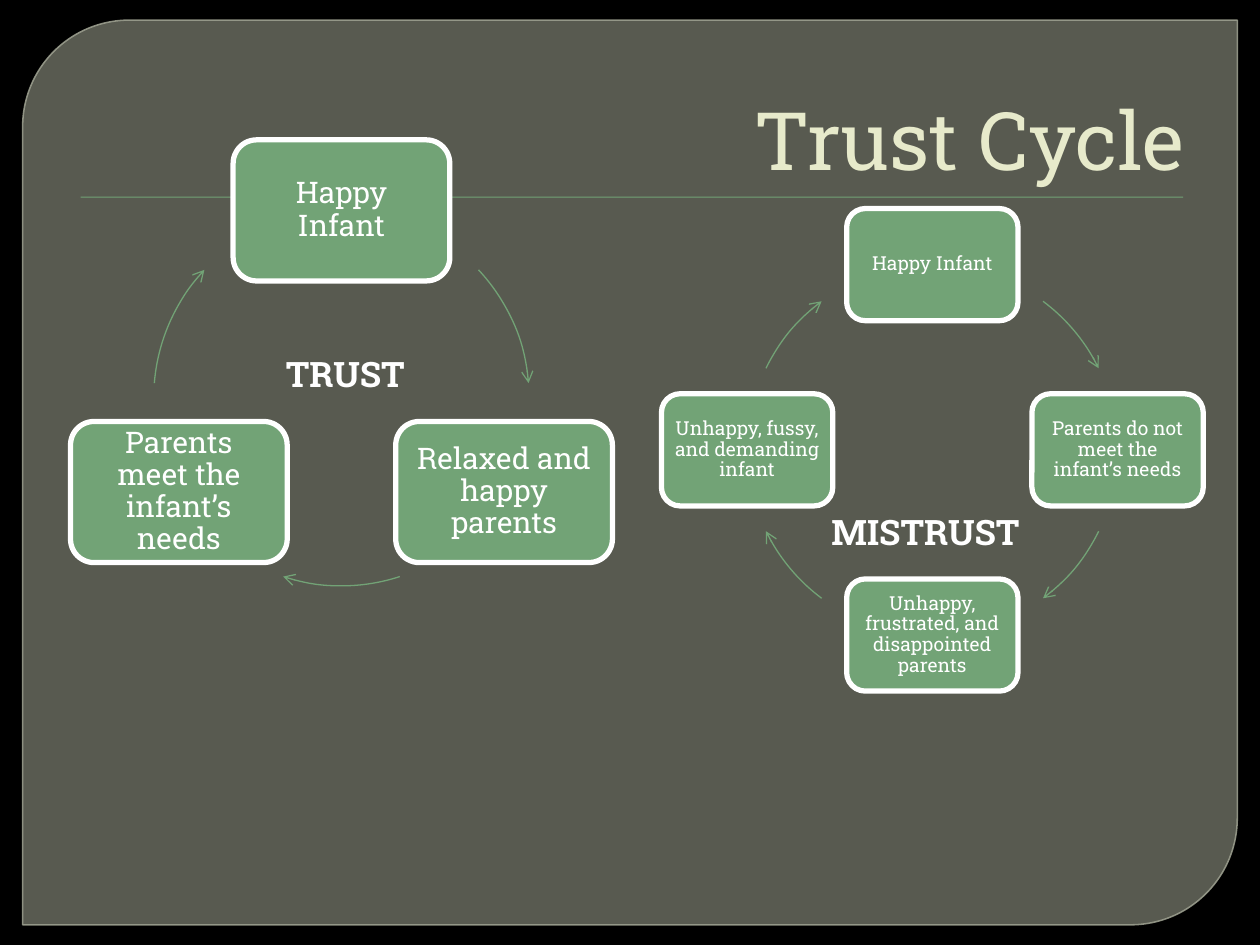
from math import cos, radians, sin

from lxml import etree
from pptx import Presentation
from pptx.dml.color import RGBColor
from pptx.enum.shapes import MSO_SHAPE
from pptx.enum.text import MSO_ANCHOR, MSO_AUTO_SIZE, PP_ALIGN
from pptx.oxml.ns import qn
from pptx.util import Inches, Pt

PANEL = MSO_SHAPE.ROUND_2_DIAG_RECTANGLE
RECTANGLE = MSO_SHAPE.RECTANGLE
ROUNDED = MSO_SHAPE.ROUNDED_RECTANGLE
ARC = MSO_SHAPE.ARC
MIDDLE, BOTTOM = MSO_ANCHOR.MIDDLE, MSO_ANCHOR.BOTTOM
CENTER, RIGHT = PP_ALIGN.CENTER, PP_ALIGN.RIGHT
NO_FIT, FIT_SHAPE = MSO_AUTO_SIZE.NONE, MSO_AUTO_SIZE.SHAPE_TO_FIT_TEXT

BLACK = RGBColor(0x00, 0x00, 0x00)
WHITE = RGBColor(0xFF, 0xFF, 0xFF)
GREEN = RGBColor(0x72, 0xA3, 0x76)
CREAM = RGBColor(0xE7, 0xEA, 0xCB)
OLIVE = RGBColor(0x88, 0x8B, 0x7B)
OLIVE_EDGE = RGBColor(0x9D, 0xA0, 0x90)
FONT = "Roboto Slab"

TRUST_STEPS = ["Happy Infant", "Relaxed and happy parents",
               "Parents meet the infant’s needs"]
TRUST_ARCS = [(316.9, 355.4), (71.9, 108.1), (184.6, 223.1)]
MISTRUST_STEPS = ["Happy Infant", "Parents do not meet the infant’s needs",
                  "Unhappy, frustrated, and disappointed parents",
                  "Unhappy, fussy, and demanding infant"]
MISTRUST_ARCS = [(306.7, 333.9), (26.1, 53.3), (126.7, 153.9), (206.1, 233.3)]


def set_opacity(shape, fill_percent, line_percent):
    colors = list(shape._element.spPr.iter(qn("a:srgbClr")))
    for color, percent in zip(colors, (fill_percent, line_percent)):
        etree.SubElement(color, qn("a:alpha")).set("val", str(percent * 1000))


def style_text(paragraph, size, color, bold=False):
    font = paragraph.font
    font.name, font.size, font.bold = FONT, Pt(size), bold
    font.color.rgb = color


def add_block(shapes, kind, left, top, width, height, fill=None):
    block = shapes.add_shape(kind, Inches(left), Inches(top),
                             Inches(width), Inches(height))
    block.shadow.inherit = False
    if fill is None:
        block.fill.background()
    else:
        block.fill.solid()
        block.fill.fore_color.rgb = fill
    block.line.fill.background()
    return block


def set_line(shape, color, width):
    shape.line.color.rgb = color
    shape.line.width = Pt(width)


def add_backdrop(slide):
    slide.background.fill.solid()
    slide.background.fill.fore_color.rgb = BLACK
    panel = add_block(slide.shapes, PANEL, 0.18, 0.16, 9.64, 7.18, OLIVE)
    panel.adjustments[0] = 0.118
    set_line(panel, OLIVE_EDGE, 0.87)
    set_opacity(panel, 65, 88)
    add_block(slide.shapes, RECTANGLE, 0.64, 1.56, 8.75, 0.01, GREEN)


def add_title(slide, text):
    title = slide.shapes.title
    title.left, title.top = Inches(0.5), Inches(0.28)
    title.width, title.height = Inches(9), Inches(1.25)
    frame = title.text_frame
    frame.text = text
    frame.vertical_anchor = BOTTOM
    frame.auto_size = NO_FIT
    frame.paragraphs[0].alignment = RIGHT
    style_text(frame.paragraphs[0], 46, CREAM)
    slide.shapes._spTree.append(title._element)


def add_step(shapes, text, center_x, center_y, width, height, size, inset):
    step = add_block(shapes, ROUNDED, center_x - width / 2,
                     center_y - height / 2, width, height, GREEN)
    set_line(step, WHITE, 3)
    frame = step.text_frame
    frame.text = text
    frame.word_wrap = True
    frame.vertical_anchor = MIDDLE
    frame.margin_left = frame.margin_right = Inches(inset)
    frame.margin_top = frame.margin_bottom = Inches(inset)
    paragraph = frame.paragraphs[0]
    paragraph.alignment = CENTER
    paragraph.line_spacing = 0.9
    style_text(paragraph, size, WHITE)


def add_arc(shapes, center_x, center_y, radius, start, end):
    arc = add_block(shapes, ARC, center_x - radius, center_y - radius,
                    2 * radius, 2 * radius)
    arc.adjustments[0], arc.adjustments[1] = start * 0.6 * 100 / 100, end * 0.6
    set_line(arc, GREEN, 0.75)
    outline = arc._element.spPr.find(qn("a:ln"))
    etree.SubElement(outline, qn("a:tailEnd")).set("type", "arrow")


def add_cycle(slide, steps, arcs, center, radius, step_size, text_size, inset):
    shapes = slide.shapes.add_group_shape().shapes
    for index, (text, (start, end)) in enumerate(zip(steps, arcs)):
        angle = radians(360 * index / len(steps) - 90)
        add_step(shapes, text, center[0] + radius * cos(angle),
                 center[1] + radius * sin(angle), *step_size, text_size, inset)
        add_arc(shapes, *center, radius, start, end)


def add_label(slide, text, left, top, width):
    label = slide.shapes.add_textbox(Inches(left), Inches(top),
                                     Inches(width), Inches(0.44))
    frame = label.text_frame
    frame.text = text
    frame.word_wrap = False
    frame.auto_size = FIT_SHAPE
    style_text(frame.paragraphs[0], 20, WHITE, bold=True)


def main():
    deck = Presentation()
    deck.slide_width, deck.slide_height = Inches(10), Inches(7.5)
    slide = deck.slides.add_slide(deck.slide_layouts.get_by_name("Title Only"))
    add_backdrop(slide)
    add_title(slide, "Trust Cycle")
    add_cycle(slide, TRUST_STEPS, TRUST_ARCS, (2.71, 3.16), 1.49,
              (1.72, 1.12), 17, 0.07)
    add_cycle(slide, MISTRUST_STEPS, MISTRUST_ARCS, (7.4, 3.57), 1.47,
              (1.36, 0.89), 11, 0.05)
    add_label(slide, "TRUST", 2.17, 2.75, 1.23)
    add_label(slide, "MISTRUST", 6.5, 4, 1.85)
    deck.save("out.pptx")


if __name__ == "__main__":
    main()
